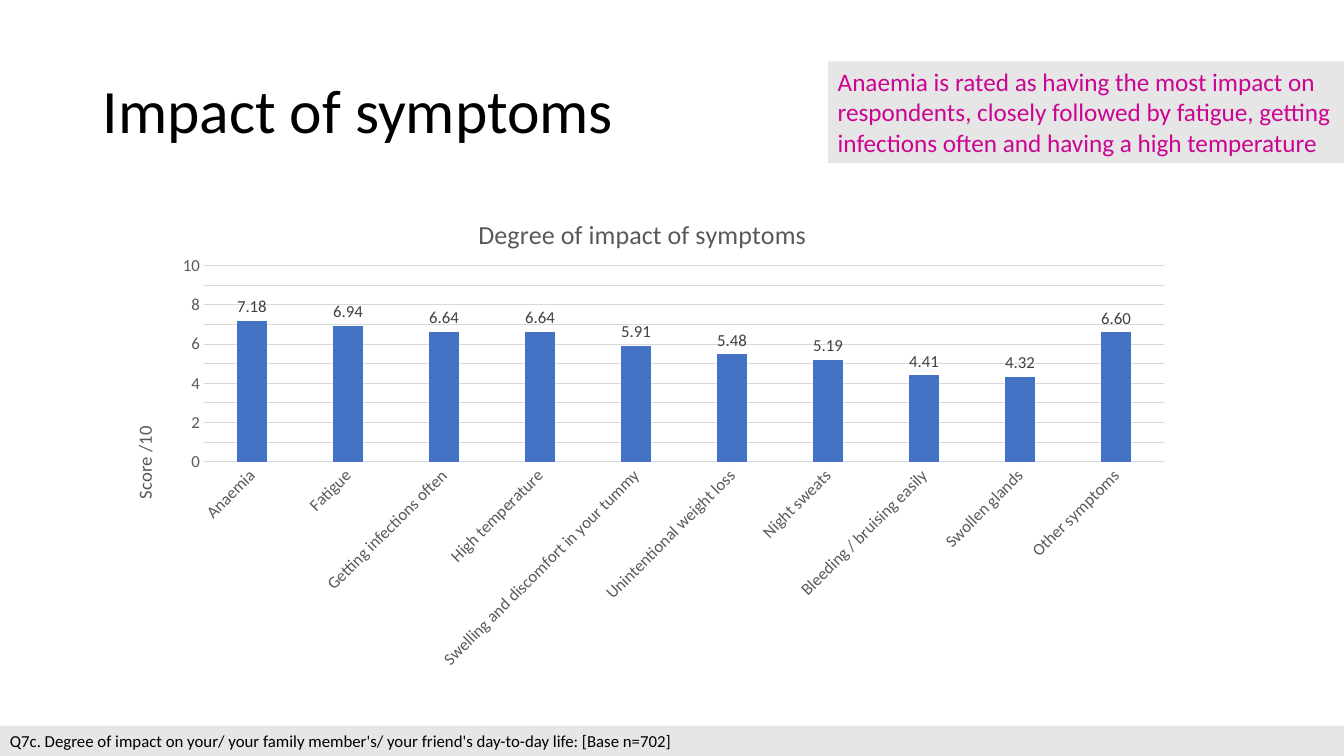
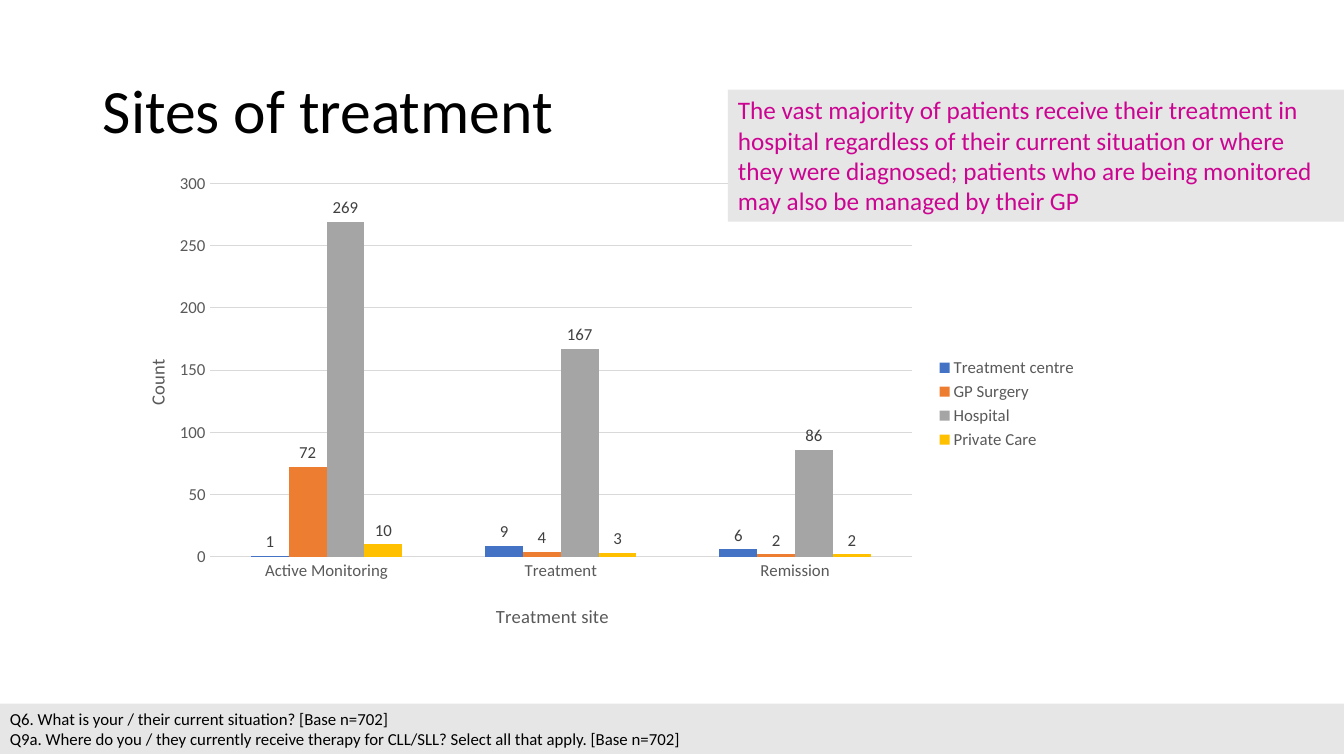
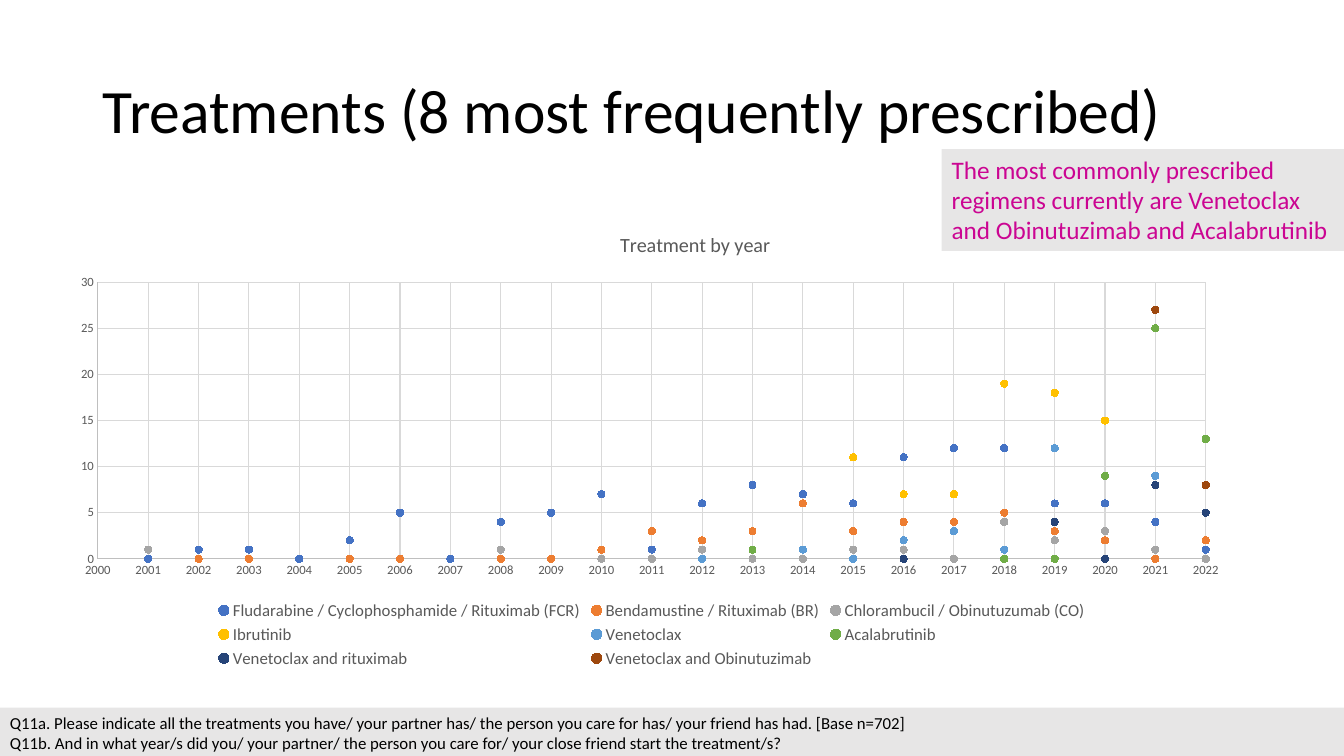
import copy
import pptx
import pptx.util
import pptx.dml.color
import pptx.chart.data
import pptx.enum.chart
import pptx.enum.shapes
import pptx.enum.text
import pptx.oxml

Inches = pptx.util.Inches
Pt = pptx.util.Pt
ChartType = pptx.enum.chart.XL_CHART_TYPE
LegendPosition = pptx.enum.chart.XL_LEGEND_POSITION

COLORS = {
    "text": "000000", "callout": "CB0592", "band": "E7E6E6",
    "chart_text": "595959", "label": "404040", "grid": "D9D9D9", "axis": "BFBFBF",
}
SERIES_COLORS = ["4472C4", "ED7D31", "A5A5A5", "FFC000",
                 "5B9BD5", "70AD47", "264478", "9E480E"]
CHART_NS = 'xmlns:c="http://schemas.openxmlformats.org/drawingml/2006/chart"'
DRAWING_NS = 'xmlns:a="http://schemas.openxmlformats.org/drawingml/2006/main"'


def style_font(font, size, color):
    for name, value in {"name": "Calibri", "size": Pt(size), "bold": False}.items():
        setattr(font, name, value)
    font.color.rgb = pptx.dml.color.RGBColor.from_string(COLORS[color])


def place_in_chart(element, index, target, fractions):
    for layout in element.xpath("c:layout"):
        element.remove(layout)
    modes = "".join(f'<c:{axis}Mode val="edge"/>' for axis in "xy")
    sizes = "".join(f'<c:{axis} val="{value}"/>' for axis, value in zip("xywh", fractions))
    element.insert(index, pptx.oxml.parse_xml(
        f"<c:layout {CHART_NS}><c:manualLayout>{target}{modes}{sizes}"
        "</c:manualLayout></c:layout>"))


slides = [
    {
        "title": "Impact of symptoms",
        "footer": (7.2, 0.3, [
            "Q7c. Degree of impact on your/ your family member's/ your friend's day-to-day life: [Base n=702]"]),
        "callout": (8.21, 0.61, 5.12, 1.01,
                    "Anaemia is rated as having the most impact on respondents, closely followed "
                    "by fatigue, getting infections often and having a high temperature"),
        "chart": (1.06, 1.86, 10.7, 4.86),
        "plot": (0.09, 0.16, 0.89, 0.4),
        "type": ChartType.COLUMN_CLUSTERED,
        "categories": ["Anaemia", "Fatigue", "Getting infections often", "High temperature",
                       "Swelling and discomfort in your tummy", "Unintentional weight loss",
                       "Night sweats", "Bleeding / bruising easily", "Swollen glands",
                       "Other symptoms"],
        "series": {"Series 1": [7.18, 6.94, 6.64, 6.64, 5.91, 5.48, 5.19, 4.41, 4.32, 6.6]},
        "label_format": "0.00",
        "overlap": -27,
        "label_rotation": -45,
        "value_axis": {"minimum_scale": 0, "maximum_scale": 10, "major_unit": 2,
                       "minor_unit": 1, "has_minor_gridlines": True},
        "chart_title": ("Degree of impact of symptoms", 18.6, 0.34, 0.05),
        "value_title": ("Score /10", 0.02, 0.48),
    },
    {
        "title": "Sites of treatment",
        "footer": (6.98, 0.5, [
            "Q6. What is your / their current situation? [Base n=702]",
            "Q9a. Where do you / they currently receive therapy for CLL/SLL? Select all that apply. [Base n=702]"]),
        "callout": (7.22, 0.89, 6.12, 1.31,
                    "The vast majority of patients receive their treatment in hospital regardless "
                    "of their current situation or where they were diagnosed; patients who are "
                    "being monitored may also be managed by their GP"),
        "chart": (1.11, 1.63, 9.68, 4.75),
        "plot": (0.1, 0.04, 0.72, 0.78),
        "type": ChartType.COLUMN_CLUSTERED,
        "categories": ["Active Monitoring", "Treatment", "Remission"],
        "series": {
            "Treatment centre": [1, 9, 6],
            "GP Surgery": [72, 4, 2],
            "Hospital": [269, 167, 86],
            "Private Care": [10, 3, 2],
        },
        "label_format": "General",
        "legend": LegendPosition.RIGHT,
        "value_title": ("Count", 0.03, 0.4),
        "category_title": ("Treatment site", 0.39, 0.91),
    },
    {
        "title": "Treatments (8 most frequently prescribed)",
        "footer": (7.02, 0.5, [
            "Q11a. Please indicate all the treatments you have/ your partner has/ the person you care for has/ your friend has had. [Base n=702]",
            "Q11b. And in what year/s did you/ your partner/ the person you care for/ your close friend start the treatment/s?"]),
        "callout": (9.34, 1.48, 3.99, 1.01,
                    "The most commonly prescribed regimens currently are Venetoclax "
                    "and Obinutuzimab and Acalabrutinib"),
        "chart": (0.62, 2.17, 11.69, 4.5),
        "plot": (0.03, 0.14, 0.94, 0.61),
        "type": ChartType.XY_SCATTER,
        "categories": range(2001, 2023),
        "series": {
            "Fludarabine / Cyclophosphamide / Rituximab (FCR)":
                [0, 1, 1, 0, 2, 5, 0, 4, 5, 7, 1, 6, 8, 7, 6, 11, 12, 12, 6, 6, 4, 1],
            "Bendamustine / Rituximab (BR)":
                [0] * 9 + [1, 3, 2, 3, 6, 3, 4, 4, 5, 3, 2, 0, 2],
            "Chlorambucil / Obinutuzumab (CO)":
                [1, 0, 1, 0, 0, 0, 0, 1, 0, 0, 0, 1, 0, 0, 1, 1, 0, 4, 2, 3, 1, 0],
            "Ibrutinib": [0] * 11 + [1, 0, 6, 11, 7, 7, 19, 18, 15, 4, 0],
            "Venetoclax": [0] * 13 + [1, 0, 2, 3, 1, 12, 6, 9, 2],
            "Acalabrutinib": [0] * 12 + [1, 1, 0, 2, 0, 0, 0, 9, 25, 13],
            "Venetoclax and rituximab": [0] * 18 + [4, 0, 8, 5],
            "Venetoclax and Obinutuzimab": [0] * 20 + [27, 8],
        },
        "legend": LegendPosition.BOTTOM,
        "category_axis": {"minimum_scale": 2000, "maximum_scale": 2022, "major_unit": 1},
        "chart_title": ("Treatment by year", 14.4, 0.47, 0.02),
    },
]

presentation = pptx.Presentation()
presentation.slide_width = Inches(13.33)
presentation.slide_height = Inches(7.5)

for content in slides:
    slide = presentation.slides.add_slide(presentation.slide_layouts[5])
    title = slide.shapes.title
    for name, value in {"left": 0.92, "top": 0.4, "width": 11.5, "height": 1.45}.items():
        setattr(title, name, Inches(value))
    title.text_frame.text = content["title"]
    title.text_frame.vertical_anchor = pptx.enum.text.MSO_ANCHOR.MIDDLE
    paragraph = title.text_frame.paragraphs[0]
    paragraph.alignment = pptx.enum.text.PP_ALIGN.LEFT
    paragraph.line_spacing = 0.9
    style_font(paragraph.font, 44, "text")

    is_scatter = content["type"] == ChartType.XY_SCATTER
    if is_scatter:
        chart_data = pptx.chart.data.XyChartData()
        for name, values in content["series"].items():
            series_data = chart_data.add_series(name)
            for year, value in zip(content["categories"], values):
                series_data.add_data_point(year, value)
    else:
        chart_data = pptx.chart.data.CategoryChartData()
        chart_data.categories = content["categories"]
        for name, values in content["series"].items():
            chart_data.add_series(name, values)
    chart = slide.shapes.add_chart(
        content["type"], *map(Inches, content["chart"]), chart_data).chart
    style_font(chart.font, 10, "text")
    chart_space = chart._chartSpace
    chart_space.xpath("c:chart")[0].addnext(pptx.oxml.parse_xml(
        f"<c:spPr {CHART_NS} {DRAWING_NS}><a:noFill/><a:ln><a:noFill/></a:ln></c:spPr>"))
    place_in_chart(chart_space.xpath("c:chart/c:plotArea")[0], 0,
                   '<c:layoutTarget val="inner"/>', content["plot"])

    plot = chart.plots[0]
    plot.vary_by_categories = False
    for series, color in zip(plot.series, SERIES_COLORS):
        rgb = pptx.dml.color.RGBColor.from_string(color)
        if is_scatter:
            series.format.line.fill.background()
            series.marker.style = pptx.enum.chart.XL_MARKER_STYLE.CIRCLE
            series.marker.size = 5
            series.marker.format.line.color.rgb = rgb
            painted = series.marker.format
        else:
            painted = series.format
        painted.fill.solid()
        painted.fill.fore_color.rgb = rgb
    if not is_scatter:
        plot.gap_width = 219
        plot.overlap = content.get("overlap", 0)
        plot.has_data_labels = True
        label_format = {
            "show_value": True,
            "position": pptx.enum.chart.XL_LABEL_POSITION.OUTSIDE_END,
            "number_format": content["label_format"],
            "number_format_is_linked": False,
        }
        for name, value in label_format.items():
            setattr(plot.data_labels, name, value)
        style_font(plot.data_labels.font, 12, "label")

    for axis_name in ("category_axis", "value_axis"):
        axis = getattr(chart, axis_name)
        axis_format = {
            "major_tick_mark": pptx.enum.chart.XL_TICK_MARK.NONE,
            "minor_tick_mark": pptx.enum.chart.XL_TICK_MARK.NONE,
            "has_major_gridlines": is_scatter or axis_name == "value_axis",
            **content.get(axis_name, {}),
        }
        for name, value in axis_format.items():
            setattr(axis, name, value)
        style_font(axis.tick_labels.font, 9 if is_scatter else 12, "chart_text")
        lines = []
        if axis.has_major_gridlines:
            lines.append((axis.major_gridlines.format.line, "grid"))
        if is_scatter or axis_name == "category_axis":
            lines.append((axis.format.line, "axis" if is_scatter else "grid"))
        else:
            axis.format.line.fill.background()
        for line, color in lines:
            line.width = Pt(0.75)
            line.color.rgb = pptx.dml.color.RGBColor.from_string(COLORS[color])
        for minor_gridlines in axis._element.xpath("c:minorGridlines"):
            grid_format = axis._element.xpath("c:majorGridlines/c:spPr")[0]
            minor_gridlines.append(copy.deepcopy(grid_format))
    if "label_rotation" in content:
        body = chart.category_axis._element.xpath("c:txPr/a:bodyPr")[0]
        body.set("rot", str(content["label_rotation"] * 60000))

    chart.has_title = "chart_title" in content
    chart_titles = []
    if chart.has_title:
        text, size, left, top = content["chart_title"]
        chart_titles.append((chart.chart_title, text, size, left, top, 0))
    for axis, key, rotation in ((chart.value_axis, "value_title", -90),
                                (chart.category_axis, "category_title", 0)):
        if key in content:
            text, left, top = content[key]
            chart_titles.append((axis.axis_title, text, 13.3, left, top, rotation))
    for chart_title, text, size, left, top, rotation in chart_titles:
        frame = chart_title.text_frame
        frame.text = text
        style_font(frame.paragraphs[0].runs[0].font, size, "chart_text")
        body = chart_title._element.xpath("c:tx/c:rich/a:bodyPr")[0]
        body.set("rot", str(rotation * 60000))
        place_in_chart(chart_title._element, 1, "", (left, top))

    chart.has_legend = "legend" in content
    if chart.has_legend:
        chart.legend.position = content["legend"]
        chart.legend.include_in_layout = False
        style_font(chart.legend.font, 12, "chart_text")

    footer_top, footer_height, questions = content["footer"]
    *callout_box, message = content["callout"]
    bands = [((0, footer_top, 13.33, footer_height), questions, 12, "text"),
             (callout_box, [message], 18, "callout")]
    for box, texts, size, color in bands:
        band = slide.shapes.add_shape(
            pptx.enum.shapes.MSO_SHAPE.RECTANGLE, *map(Inches, box))
        band.shadow.inherit = False
        band.fill.solid()
        band.fill.fore_color.rgb = pptx.dml.color.RGBColor.from_string(COLORS["band"])
        band.line.fill.background()
        frame = band.text_frame
        frame.word_wrap = True
        frame.vertical_anchor = pptx.enum.text.MSO_ANCHOR.TOP
        frame.text = "\n".join(texts)
        for paragraph in frame.paragraphs:
            paragraph.alignment = pptx.enum.text.PP_ALIGN.LEFT
            style_font(paragraph.font, size, color)

presentation.save("out.pptx")
